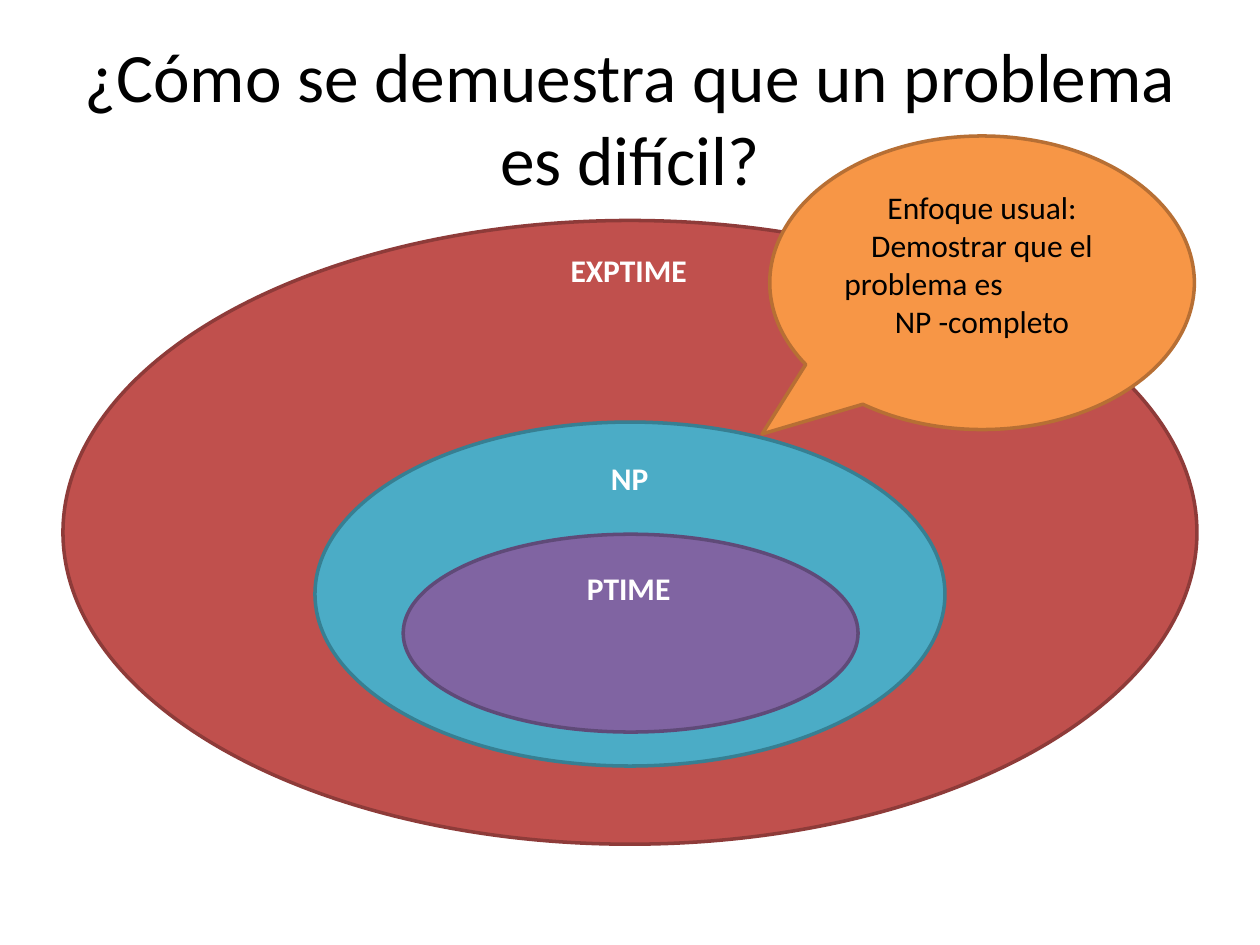
import dataclasses

import pptx
import pptx.dml.color
import pptx.enum.shapes
import pptx.enum.text
import pptx.util

Inches = pptx.util.Inches
Shape = pptx.enum.shapes.MSO_SHAPE
Align = pptx.enum.text.PP_ALIGN
Anchor = pptx.enum.text.MSO_ANCHOR


@dataclasses.dataclass(frozen=True)
class Theme:
    font: str = "Calibri"
    title_size: float = 39.6
    body_size: float = 18
    line_width: float = 2
    dark: str = "000000"
    light: str = "FFFFFF"
    exptime: tuple = ("C0504D", "8E3B39")
    np: tuple = ("4BACC6", "377F92")
    ptime: tuple = ("8064A2", "5F4A78")
    callout: tuple = ("F79646", "B76F34")


THEME = Theme()


def color(value):
    return pptx.dml.color.RGBColor.from_string(value)


def write(para, text, size, ink, bold=False, align=Align.CENTER):
    para.text = text
    para.alignment = align
    para.font.name = THEME.font
    para.font.size = pptx.util.Pt(size)
    para.font.bold = bold
    para.font.color.rgb = color(ink)


def add_filled(page, kind, place, colors):
    shape = page.shapes.add_shape(kind, *map(Inches, place))
    fill, line = colors
    shape.shadow.inherit = False
    shape.fill.solid()
    shape.fill.fore_color.rgb = color(fill)
    shape.line.color.rgb = color(line)
    shape.line.width = pptx.util.Pt(THEME.line_width)
    return shape


def add_title(page, text):
    box = page.shapes.add_textbox(*map(Inches, (0.5, 0.3, 9, 1.25)))
    frame = box.text_frame
    frame.word_wrap = True
    frame.vertical_anchor = Anchor.MIDDLE
    write(frame.paragraphs[0], text, THEME.title_size, THEME.dark)


def add_label(page, text, place):
    box = page.shapes.add_textbox(*map(Inches, place))
    box.text_frame.word_wrap = False
    write(box.text_frame.paragraphs[0], text, THEME.body_size, THEME.light,
          bold=True, align=Align.LEFT)


def add_callout(page, lines):
    callout = add_filled(page, Shape.OVAL_CALLOUT, (6.11, 1.08, 3.37, 2.33), THEME.callout)
    callout.adjustments[0] = -0.518
    callout.adjustments[1] = 0.515
    frame = callout.text_frame
    frame.word_wrap = True
    frame.vertical_anchor = Anchor.MIDDLE
    frame.margin_bottom = Inches(0.35)
    for index, (text, align) in enumerate(lines):
        para = frame.add_paragraph() if index else frame.paragraphs[0]
        write(para, text, THEME.body_size, THEME.dark, align=align)


def main():
    deck = pptx.Presentation()
    deck.slide_width, deck.slide_height = Inches(10), Inches(7.5)
    page = deck.slides.add_slide(deck.slide_layouts[6])

    add_title(page, "¿Cómo se demuestra que un problema es difícil?")
    classes = [
        ("EXPTIME", (0.5, 1.75, 9, 4.95), THEME.exptime, (4.43, 1.94, 1.13, 0.4)),
        ("NP", (2.5, 3.35, 5, 2.73), THEME.np, (4.75, 3.59, 0.5, 0.4)),
        ("PTIME", (3.2, 4.24, 3.61, 1.57), THEME.ptime, (4.56, 4.47, 0.87, 0.4)),
    ]
    for name, oval, colors, label in classes:
        add_filled(page, Shape.OVAL, oval, colors)
    for name, oval, colors, label in classes:
        add_label(page, name, label)
    add_callout(page, [
        ("Enfoque usual:", Align.CENTER),
        ("Demostrar que el", Align.CENTER),
        ("problema es", Align.LEFT),
        ("NP -completo", Align.CENTER),
    ])
    deck.save("out.pptx")


if __name__ == "__main__":
    main()
